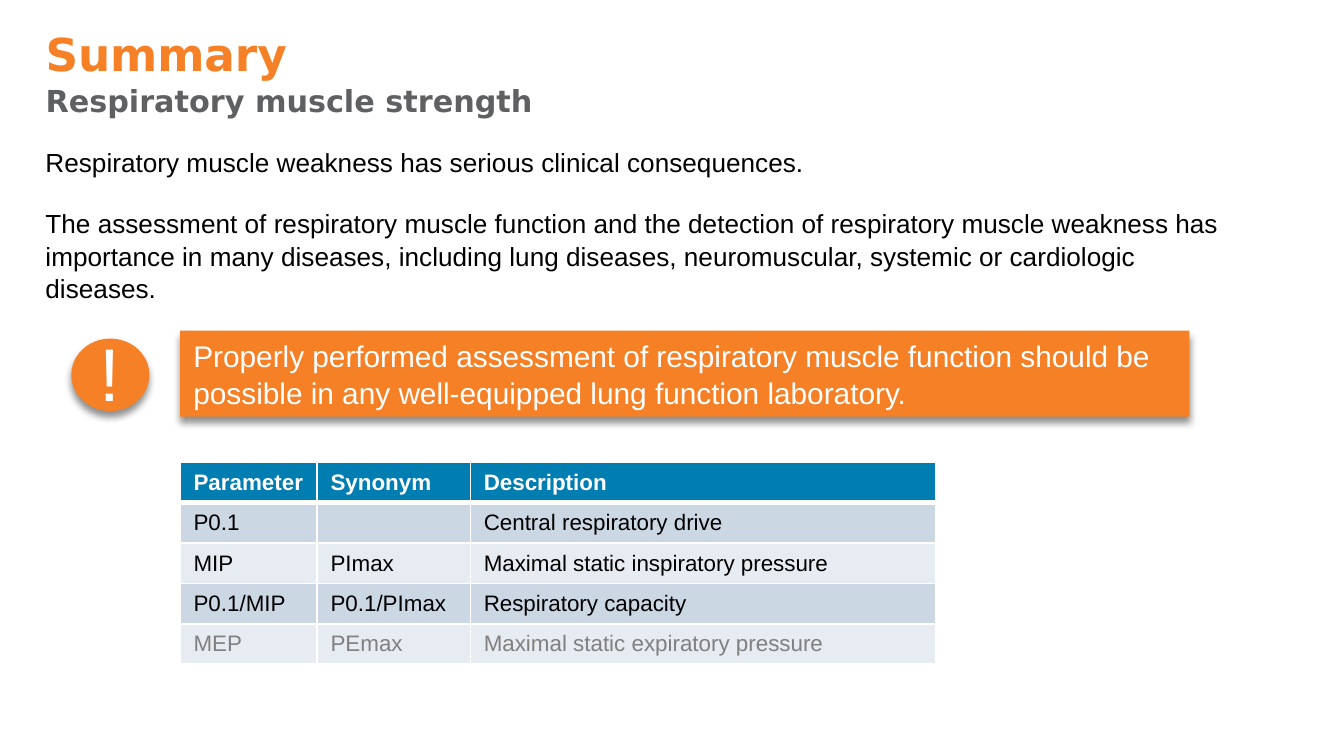
import pptx
import pptx.dml.color
import pptx.enum.shapes
import pptx.enum.text
import pptx.oxml.ns
import pptx.util
import lxml.etree

Pt = pptx.util.Pt
qn = pptx.oxml.ns.qn
SHAPE = pptx.enum.shapes.MSO_SHAPE
ANCHOR = pptx.enum.text.MSO_ANCHOR
ALIGN = pptx.enum.text.PP_ALIGN

COLORS = {
    "orange": "F58025",
    "gray": "5F6062",
    "black": "000000",
    "white": "FFFFFF",
    "blue": "007DB1",
    "band_dark": "CCD7E4",
    "band_light": "E7ECF2",
    "muted": "808080",
}


def rgb(color):
    return pptx.dml.color.RGBColor.from_string(COLORS[color])


def write_text(paragraph, text, size=14, color="black", font="Arial", bold=False):
    run = paragraph.add_run()
    run.text = text
    run.font.size = Pt(size)
    run.font.name = font
    run.font.bold = bold
    run.font.color.rgb = rgb(color)


class SummarySlide:
    heading_font = "DejaVu Sans"
    line_spacing = 1.04

    def __init__(self, deck):
        self.slide = deck.slides.add_slide(deck.slide_layouts[6])
        self.shapes = self.slide.shapes

    def text_box(self, box, parent=None, anchor=ANCHOR.TOP):
        frame = (parent or self.shapes).add_textbox(*map(Pt, box)).text_frame
        frame.word_wrap = True
        frame.vertical_anchor = anchor
        return frame

    def heading(self, box, title, subtitle):
        paragraph = self.text_box(box, anchor=ANCHOR.MIDDLE).paragraphs[0]
        paragraph.line_spacing = self.line_spacing
        write_text(paragraph, title, size=24.3, color="orange", font=self.heading_font, bold=True)
        paragraph.add_line_break()
        write_text(paragraph, subtitle, size=16.2, color="gray", font=self.heading_font, bold=True)

    def body(self, box, statements, gap):
        frame = self.text_box(box)
        for index, statement in enumerate(statements):
            paragraph = frame.add_paragraph() if index else frame.paragraphs[0]
            paragraph.line_spacing = self.line_spacing
            paragraph.space_before = Pt(gap if index else 0)
            write_text(paragraph, statement)

    def raised_shape(self, kind, box, parent=None):
        shape = (parent or self.shapes).add_shape(kind, *map(Pt, box))
        shape.fill.solid()
        shape.fill.fore_color.rgb = rgb("orange")
        shape.line.fill.background()
        shape.shadow.inherit = False
        effects = shape._element.spPr.find(qn("a:effectLst"))
        shadow = lxml.etree.SubElement(
            effects, qn("a:outerShdw"), blurRad=str(Pt(4)), dist=str(Pt(3)),
            dir="5400000", algn="t", rotWithShape="0")
        tint = lxml.etree.SubElement(shadow, qn("a:srgbClr"), val=COLORS["black"])
        lxml.etree.SubElement(tint, qn("a:alpha"), val="43000")
        return shape

    def callout(self, box, message):
        frame = self.raised_shape(SHAPE.RECTANGLE, box).text_frame
        frame.word_wrap = True
        frame.vertical_anchor = ANCHOR.MIDDLE
        paragraph = frame.paragraphs[0]
        paragraph.alignment = ALIGN.LEFT
        paragraph.line_spacing = self.line_spacing
        write_text(paragraph, message, size=16, color="white")

    def alert_badge(self, circle_box, mark_box):
        badge = self.shapes.add_group_shape().shapes
        self.raised_shape(SHAPE.OVAL, circle_box, parent=badge)
        mark = self.text_box(mark_box, parent=badge).paragraphs[0]
        write_text(mark, "!", size=40, color="white")

    def cell_borders(self, cell, widths):
        properties = cell._tc.get_or_add_tcPr()
        for side, width in widths.items():
            border = lxml.etree.SubElement(properties, qn(f"a:ln{side}"), w=str(Pt(width)))
            fill = lxml.etree.SubElement(border, qn("a:solidFill"))
            lxml.etree.SubElement(fill, qn("a:srgbClr"), val=COLORS["white"])

    def table(self, left, top, column_widths, row_height, rows):
        frame = self.shapes.add_table(
            len(rows), len(column_widths), Pt(left), Pt(top),
            Pt(sum(column_widths)), Pt(row_height * len(rows)))
        grid = frame.table
        for column, width in zip(grid.columns, column_widths):
            column.width = Pt(width)
        for r, row in enumerate(rows):
            grid.rows[r].height = Pt(row_height)
            header = r == 0
            band = "blue" if header else "band_dark" if r % 2 else "band_light"
            color = "white" if header else "muted" if r == len(rows) - 1 else "black"
            widths = {"L": 1, "R": 1, "T": 3 if r == 1 else 1, "B": 3 if header else 1}
            for c, text in enumerate(row):
                cell = grid.cell(r, c)
                self.cell_borders(cell, widths)
                cell.fill.solid()
                cell.fill.fore_color.rgb = rgb(band)
                cell.vertical_anchor = ANCHOR.MIDDLE
                paragraph = cell.text_frame.paragraphs[0]
                if text:
                    write_text(paragraph, text, size=12, color=color, bold=header)
                else:
                    lxml.etree.SubElement(paragraph._p, qn("a:endParaRPr"), sz="1200")


def main():
    deck = pptx.Presentation()
    deck.slide_width, deck.slide_height = Pt(720), Pt(405)
    summary = SummarySlide(deck)
    summary.heading((17.3, 11, 317.5, 54), "Summary", "Respiratory muscle strength")
    summary.body((17.3, 74.2, 648, 100.8), [
        "Respiratory muscle weakness has serious clinical consequences.",
        "The assessment of respiratory muscle function and the detection of respiratory "
        "muscle weakness has importance in many diseases, including lung diseases, "
        "neuromuscular, systemic or cardiologic diseases.",
    ], gap=15.4)
    summary.callout(
        (96.5, 177.1, 540.7, 46.1),
        "Properly performed assessment of respiratory muscle function should be "
        "possible in any well-equipped lung function laboratory.")
    summary.alert_badge((38.2, 181.4, 41.8, 38.9), (46.1, 171.4, 26.6, 55.4))
    summary.table(96.5, 247.7, [73.4, 82.1, 249.1], 21.6, [
        ("Parameter", "Synonym", "Description"),
        ("P0.1", "", "Central respiratory drive"),
        ("MIP", "PImax", "Maximal static inspiratory pressure"),
        ("P0.1/MIP", "P0.1/PImax", "Respiratory capacity"),
        ("MEP", "PEmax", "Maximal static expiratory pressure"),
    ])
    deck.save("out.pptx")


if __name__ == "__main__":
    main()
